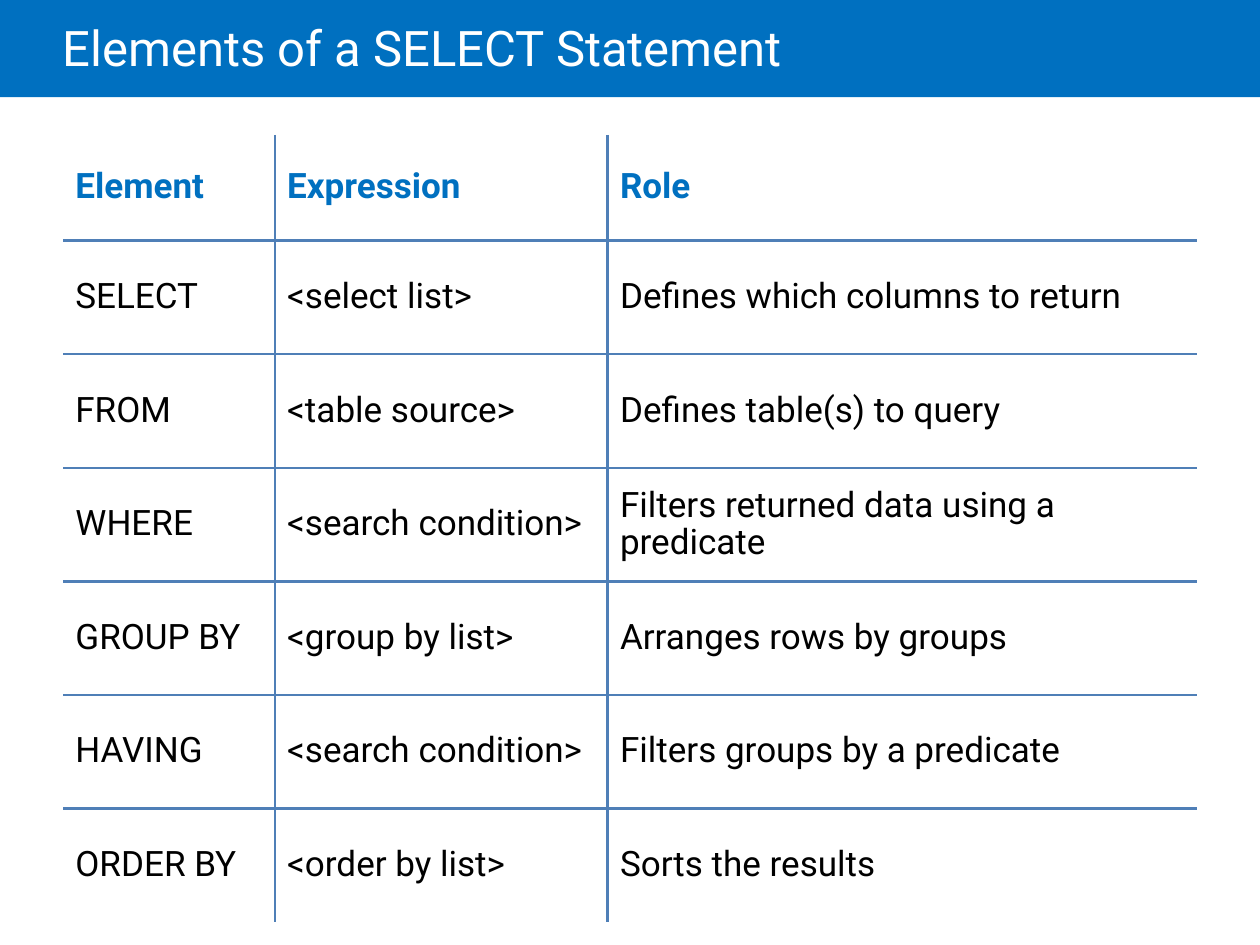
from dataclasses import dataclass

from lxml import etree
from pptx import Presentation
from pptx.dml.color import RGBColor
from pptx.enum import shapes, text
from pptx.oxml import ns
from pptx.util import Cm, Pt


@dataclass(frozen=True)
class Theme:
    font: str = "Roboto"
    blue: str = "0070C0"
    rule: str = "4F7FB7"
    white: str = "FFFFFF"
    black: str = "000000"
    title: int = 28
    body: int = 20
    line: float = 1.5


THEME = Theme()
WIDTHS = (4.27, 6.71, 11.89)
HEAD = 2.13
ROW = 2.29
PAD = Cm(0.25)
ROWS = (
    ("Element", "Expression", "Role"),
    ("SELECT", "<select list>", "Defines which columns to return"),
    ("FROM", "<table source>", "Defines table(s) to query"),
    ("WHERE", "<search condition>", "Filters returned data using a predicate"),
    ("GROUP BY", "<group by list>", "Arranges rows by groups"),
    ("HAVING", "<search condition>", "Filters groups by a predicate"),
    ("ORDER BY", "<order by list>", "Sorts the results"),
)


def write(frame, words, size, color, bold=False, space=0.9):
    para = frame.paragraphs[0]
    para.text = words
    para.line_spacing = space
    para.alignment = text.PP_ALIGN.LEFT
    font = para.font
    font.name = THEME.font
    font.size = Pt(size)
    font.bold = bold
    font.color.rgb = RGBColor.from_string(color)


def add_band(slide, width):
    band = slide.shapes.add_shape(
        shapes.MSO_SHAPE.RECTANGLE, 0, 0, width, Cm(1.96))
    band.shadow.inherit = False
    band.fill.solid()
    band.fill.fore_color.rgb = RGBColor.from_string(THEME.blue)
    band.line.fill.background()


def add_title(slide, words):
    box = slide.shapes.add_textbox(Cm(1.27), 0, Cm(21.59), Cm(2.06))
    frame = box.text_frame
    frame.word_wrap = True
    frame.margin_left = 0
    frame.vertical_anchor = text.MSO_ANCHOR.MIDDLE
    write(frame, words, THEME.title, THEME.white, space=0.85)


def set_edges(cell, edges):
    props = cell._tc.get_or_add_tcPr()
    for spot, (side, shown) in enumerate(edges.items()):
        line = etree.Element(ns.qn(f"a:ln{side}"), w=str(Pt(THEME.line)))
        if shown:
            fill = etree.SubElement(line, ns.qn("a:solidFill"))
            etree.SubElement(fill, ns.qn("a:srgbClr"), val=THEME.rule)
        else:
            etree.SubElement(line, ns.qn("a:noFill"))
        props.insert(spot, line)


def fill_cell(cell, words, head):
    cell.fill.background()
    cell.vertical_anchor = text.MSO_ANCHOR.MIDDLE
    cell.margin_left = cell.margin_right = PAD
    cell.margin_top = cell.margin_bottom = PAD
    color = THEME.blue if head else THEME.black
    write(cell.text_frame, words, THEME.body, color, bold=head)


def add_grid(slide):
    last_row, last_col = len(ROWS) - 1, len(WIDTHS) - 1
    grid = slide.shapes.add_table(
        len(ROWS), len(WIDTHS), Cm(1.27), Cm(2.72),
        Cm(sum(WIDTHS)), Cm(HEAD + ROW * last_row)).table
    for col, width in zip(grid.columns, WIDTHS):
        col.width = Cm(width)
    for r, words in enumerate(ROWS):
        grid.rows[r].height = Cm(ROW if r else HEAD)
        for c, word in enumerate(words):
            cell = grid.cell(r, c)
            fill_cell(cell, word, head=r == 0)
            set_edges(cell, {"L": c > 0, "R": c < last_col,
                             "T": r > 0, "B": r < last_row})


def main():
    deck = Presentation()
    deck.slide_width, deck.slide_height = Cm(25.4), Cm(19.05)
    slide = deck.slides.add_slide(deck.slide_layouts[6])
    add_band(slide, deck.slide_width)
    add_title(slide, "Elements of a SELECT Statement")
    add_grid(slide)
    deck.save("out.pptx")


if __name__ == "__main__":
    main()
